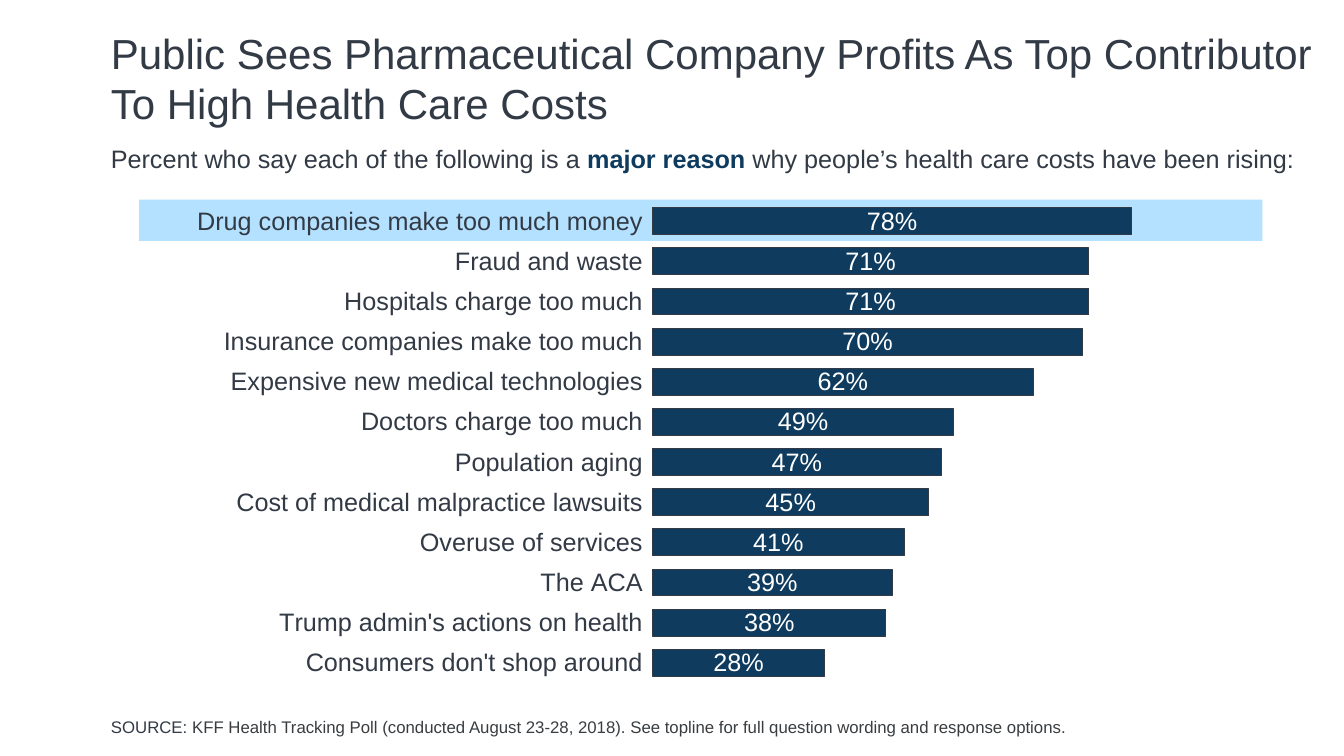
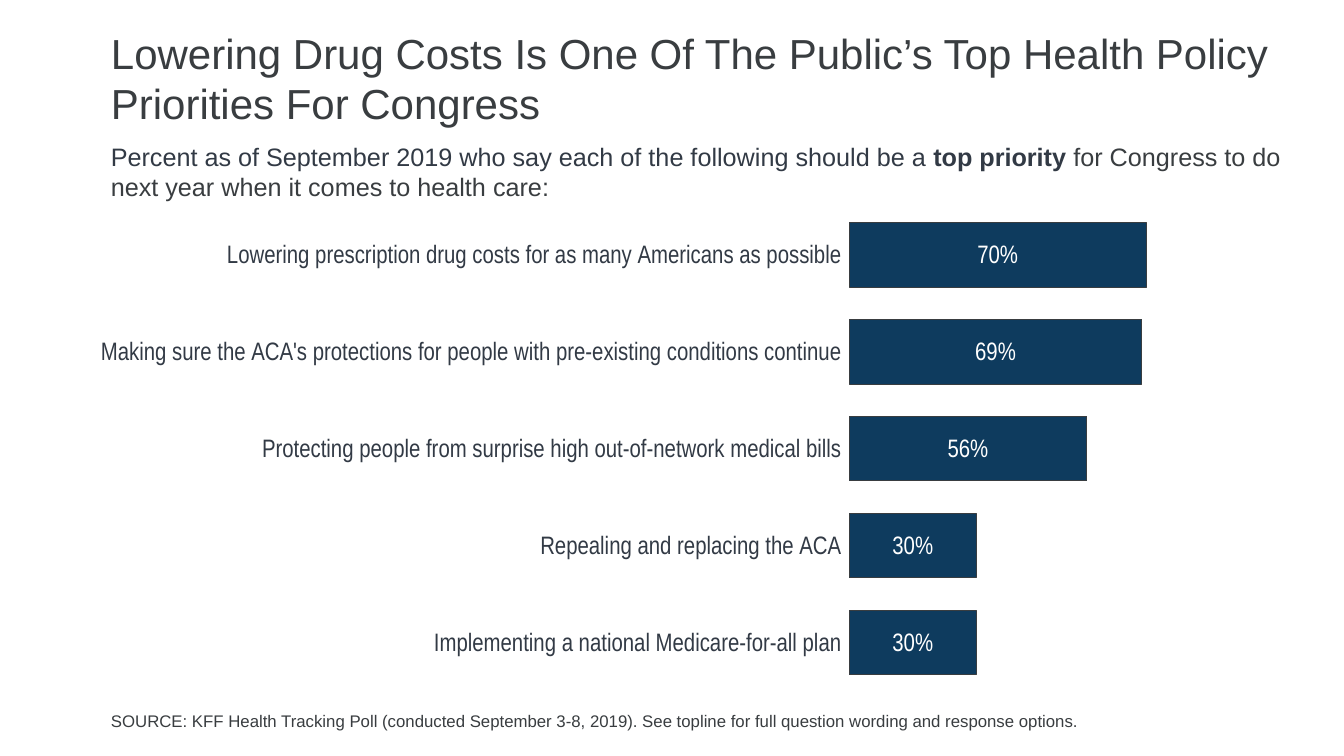
from dataclasses import dataclass

from lxml import etree
from pptx import Presentation
from pptx.chart.data import CategoryChartData
from pptx.dml.color import RGBColor
from pptx.enum.chart import XL_CHART_TYPE, XL_LABEL_POSITION, XL_TICK_MARK
from pptx.enum.shapes import MSO_SHAPE
from pptx.enum.text import MSO_ANCHOR, MSO_AUTO_SIZE, PP_ALIGN
from pptx.oxml.ns import qn
from pptx.util import Inches, Pt


@dataclass(frozen=True)
class Theme:
    font: str = "Arial"
    slate: str = "323A45"
    gray: str = "393D40"
    navy: str = "0E3B5E"
    sky: str = "B4E1FF"
    white: str = "FFFFFF"
    title: int = 30
    text: int = 18
    note: int = 12


THEME = Theme()
LEFT = 1

# Bars, top to bottom
CAUSES = {
    "Drug companies make too much money": 0.78,
    "Fraud and waste": 0.71,
    "Hospitals charge too much": 0.71,
    "Insurance companies make too much": 0.7,
    "Expensive new medical technologies": 0.62,
    "Doctors charge too much": 0.49,
    "Population aging": 0.47,
    "Cost of medical malpractice lawsuits": 0.45,
    "Overuse of services": 0.41,
    "The ACA": 0.39,
    "Trump admin's actions on health": 0.38,
    "Consumers don't shop around": 0.28,
}
GOALS = {
    "Lowering prescription drug costs for as many Americans as possible": 0.7,
    "Making sure the ACA's protections for people with pre-existing "
    "conditions continue": 0.69,
    "Protecting people from surprise high out-of-network medical bills": 0.56,
    "Repealing and replacing the ACA": 0.3,
    "Implementing a national Medicare-for-all plan": 0.3,
}


def rgb(color):
    return RGBColor.from_string(color)


def place(shape, x, y, w, h):
    shape.left, shape.top = Inches(x), Inches(y)
    shape.width, shape.height = Inches(w), Inches(h)


def style(font, size, color, bold=False):
    font.name, font.size, font.bold = THEME.font, Pt(size), bold
    font.color.rgb = rgb(color)


def write(shape, size, runs):
    """Fill a shape with one left-aligned paragraph of (text, color, bold)."""
    frame = shape.text_frame
    frame.word_wrap = True
    frame.auto_size = MSO_AUTO_SIZE.NONE
    frame.vertical_anchor = MSO_ANCHOR.TOP
    para = frame.paragraphs[0]
    para.alignment = PP_ALIGN.LEFT
    para.space_before = Pt(0)
    for text, color, bold in runs:
        run = para.add_run()
        run.text = text
        style(run.font, size, color, bold)


def add_title(slide, text, color, width):
    title = slide.shapes.title
    place(title, LEFT, 0.22, width, 0.92)
    write(title, THEME.title, [(text, color, False)])


def add_lead(slide, box, runs):
    lead = slide.shapes.add_textbox(*map(Inches, box))
    write(lead, THEME.text, runs)


def add_source(slide, top, runs):
    body = slide.placeholders[1]
    place(body, LEFT, top, 10.04, 0.3)
    props = body.text_frame.paragraphs[0]._p.get_or_add_pPr()
    props.set("marL", "0")
    props.set("indent", "0")
    etree.SubElement(props, qn("a:buNone"))
    write(body, THEME.note, runs)


def add_band(slide, box):
    band = slide.shapes.add_shape(MSO_SHAPE.RECTANGLE, *map(Inches, box))
    band.shadow.inherit = False
    band.fill.solid()
    band.fill.fore_color.rgb = rgb(THEME.sky)
    band.line.fill.background()


def set_plot(chart, x, y, w, h):
    """Fix the inner plot area, as shares of the chart."""
    area = chart._chartSpace.chart.plotArea
    for old in area.findall(qn("c:layout")):
        area.remove(old)
    layout = etree.Element(qn("c:layout"))
    area.insert(0, layout)
    manual = etree.SubElement(layout, qn("c:manualLayout"))
    values = {"layoutTarget": "inner", "xMode": "edge", "yMode": "edge",
              "x": x, "y": y, "w": w, "h": h}
    for name, value in values.items():
        etree.SubElement(manual, qn(f"c:{name}")).set("val", str(value))


def add_bars(slide, box, plot_box, bars, edge):
    data = CategoryChartData(number_format="0%")
    data.categories = list(bars)
    data.add_series("Series 1", list(bars.values()))
    chart = slide.shapes.add_chart(
        XL_CHART_TYPE.BAR_STACKED, *map(Inches, box), data).chart
    chart.has_title = chart.has_legend = False
    style(chart.font, THEME.text, THEME.slate)
    set_plot(chart, *plot_box)

    # Axes
    names = chart.category_axis
    names.reverse_order = True
    names.major_tick_mark = XL_TICK_MARK.OUTSIDE
    names.format.line.fill.background()
    style(names.tick_labels.font, THEME.text, THEME.slate)
    scale = chart.value_axis
    scale.minimum_scale, scale.maximum_scale = 0, 1
    scale.major_unit = 0.1
    scale.has_major_gridlines = False
    scale.visible = False

    # Bars and their labels
    plot = chart.plots[0]
    plot.gap_width, plot.overlap = 50, 100
    plot.vary_by_categories = False
    look = plot.series[0].format
    look.fill.solid()
    look.fill.fore_color.rgb = rgb(THEME.navy)
    look.line.color.rgb = rgb(edge)
    look.line.width = Pt(0.75)
    plot.has_data_labels = True
    labels = plot.data_labels
    labels.show_value = True
    labels.position = XL_LABEL_POSITION.CENTER
    labels.number_format = "0%"
    labels.number_format_is_linked = False
    style(labels.font, THEME.text, THEME.white)


def build_causes(slide):
    add_band(slide, (1.38, 1.98, 11.14, 0.41))
    add_title(slide, "Public Sees Pharmaceutical Company Profits As Top "
              "Contributor To High Health Care Costs", THEME.slate, 12.33)
    add_lead(slide, (LEFT, 1.37, 12.08, 0.4), [
        ("Percent who say each of the following is a ", THEME.slate, False),
        ("major reason ", THEME.navy, True),
        ("why people’s health care costs have been rising:",
         THEME.slate, False)])
    add_bars(slide, (1.38, 1.79, 11.47, 5.13),
             (0.444, 0.04, 0.531, 0.932), CAUSES, THEME.slate)
    add_source(slide, 7.06, [
        ("SOURCE: ", THEME.slate, False),
        ("KFF Health Tracking Poll (conducted August 23-28, 2018). See "
         "topline for full question wording and response options.",
         THEME.gray, False)])


def build_goals(slide):
    add_title(slide, "Lowering Drug Costs Is One Of The Public’s Top Health "
              "Policy Priorities For Congress", THEME.gray, 12.13)
    add_lead(slide, (LEFT, 1.35, 11.95, 0.71), [
        ("Percent as of September 2019 who say each of the following should "
         "be a ", THEME.slate, False),
        ("top priority", THEME.slate, True),
        (" for Congress to do next year when it comes to health care:",
         THEME.gray, False)])
    add_bars(slide, (LEFT, 1.95, 11.63, 4.91),
             (0.552, 0.02, 0.448, 0.979), GOALS, THEME.gray)
    add_source(slide, 7, [
        ("SOURCE: KFF Health Tracking Poll (conducted September 3-8, 2019). "
         "See topline for full question wording and response options.",
         THEME.gray, False)])


def main():
    deck = Presentation()
    deck.slide_width, deck.slide_height = Inches(13.33), Inches(7.5)
    layout = deck.slide_layouts[1]
    for build in (build_causes, build_goals):
        build(deck.slides.add_slide(layout))
    deck.save("out.pptx")


if __name__ == "__main__":
    main()
